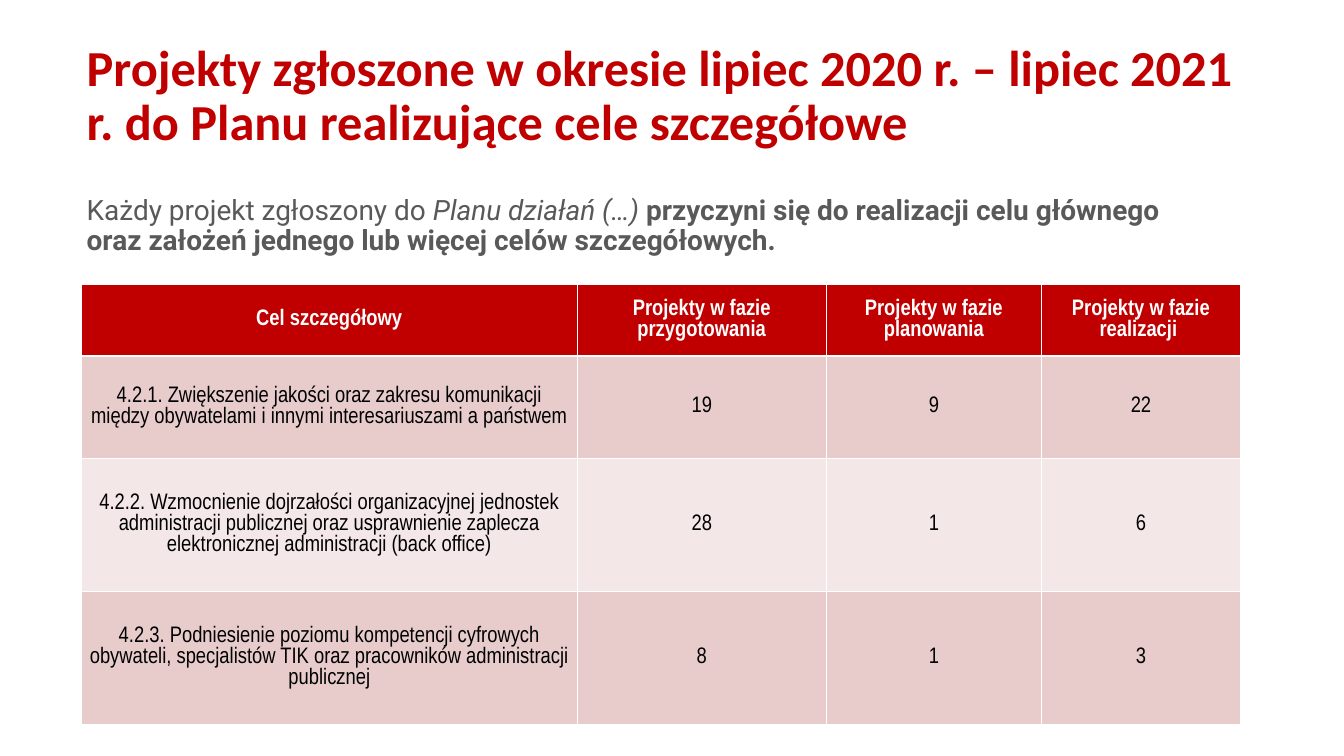
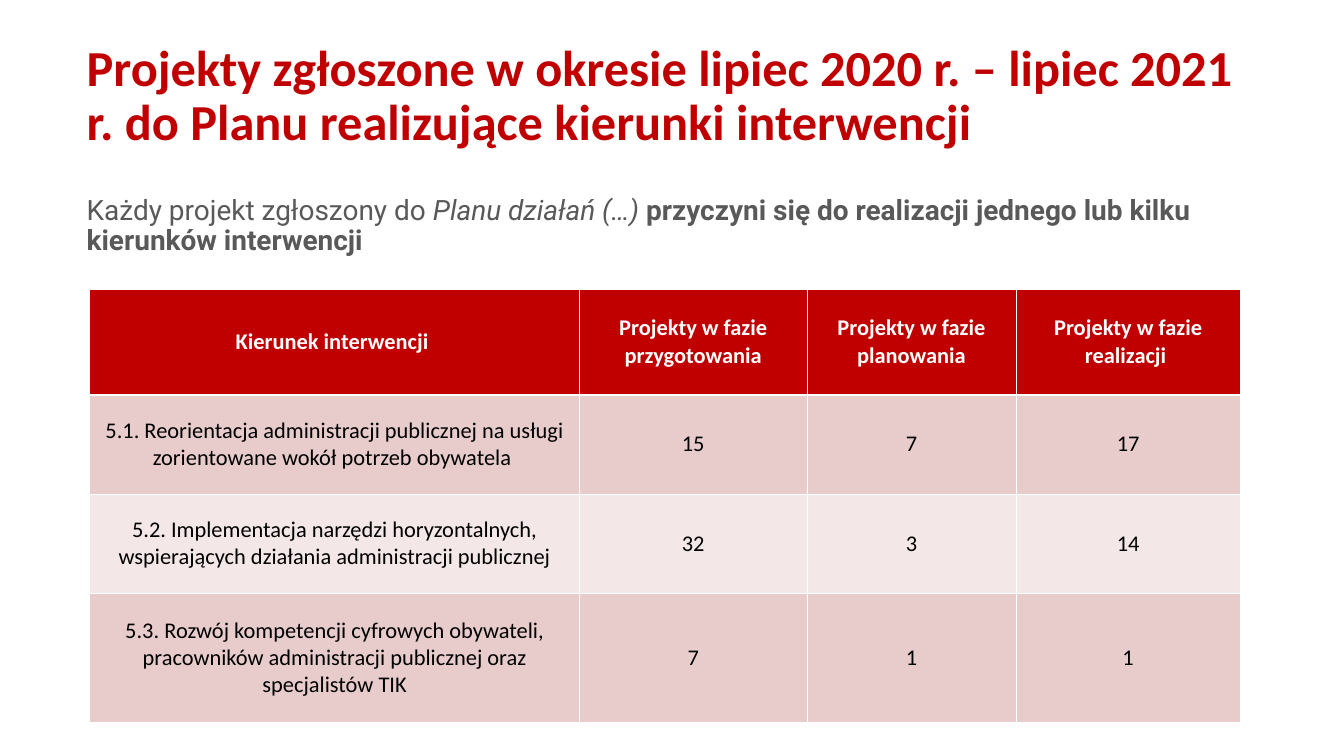
from lxml.etree import SubElement
from pptx import Presentation
from pptx.dml.color import RGBColor
from pptx.enum.text import MSO_ANCHOR as Anchor, MSO_AUTO_SIZE as AutoSize, PP_ALIGN as Align
from pptx.oxml.ns import qn
from pptx.util import Pt

COLORS = {
    "accent": "C00000",
    "lead": "595959",
    "cell": "000000",
    "white": "FFFFFF",
    "band_dark": "E8CCCC",
    "band_light": "F4E7E7",
}
LEFT = 116.6
TITLE_BOX = (LEFT, 57.6, 1656, 171.4)
TITLE_START = "Projekty zgłoszone w okresie lipiec 2020 r. – lipiec 2021 r. do Planu realizujące "
LEAD_START = "Każdy projekt zgłoszony do "
PLAN_NAME = "Planu działań (…) "
PHASES = [
    "Projekty w fazie przygotowania",
    "Projekty w fazie planowania",
    "Projekty w fazie realizacji ",
]

GOALS = {
    "topic": "cele szczegółowe",
    "lead": "przyczyni się do realizacji celu głównego oraz założeń "
            "jednego lub więcej celów szczegółowych.",
    "lead_size": (1615.7, 127.4),
    "corner": (LEFT, 406.1),
    "widths": [707.8, 356.4, 306.7, 285.1],
    "heights": [102.2, 146.2, 190.1, 190.1],
    "font": "Arial Narrow",
    "label_margin": 7.2,
    "rows": [
        ["Cel szczegółowy", *PHASES],
        ["4.2.1. Zwiększenie jakości oraz zakresu komunikacji między obywatelami "
         "i innymi interesariuszami a państwem", 19, 9, 22],
        ["4.2.2. Wzmocnienie dojrzałości organizacyjnej jednostek administracji publicznej "
         "oraz usprawnienie zaplecza elektronicznej administracji (back office)", 28, 1, 6],
        ["4.2.3. Podniesienie poziomu kompetencji cyfrowych obywateli, specjalistów TIK "
         "oraz pracowników administracji publicznej", 8, 1, 3],
    ],
}
INTERVENTIONS = {
    "topic": "kierunki interwencji",
    "lead": "przyczyni się do realizacji jednego lub kilku kierunków interwencji",
    "lead_size": (1602, 113.8),
    "corner": (128.2, 413.3),
    "widths": [699.8, 324.7, 298.8, 320.4],
    "heights": [150.5, 141.8, 141.8, 185],
    "font": "Calibri",
    "label_margin": 0,
    "rows": [
        ["Kierunek interwencji ", *PHASES],
        ["5.1. Reorientacja administracji publicznej na usługi zorientowane "
         "wokół potrzeb obywatela ", 15, 7, 17],
        ["5.2. Implementacja narzędzi horyzontalnych, wspierających działania "
         "administracji publicznej", 32, 3, 14],
        ["5.3. Rozwój kompetencji cyfrowych obywateli, pracowników administracji "
         "publicznej oraz specjalistów TIK", 7, 1, 1],
    ],
}


def rgb(name):
    return RGBColor.from_string(COLORS[name])


def style_run(run, font_name, size, color, bold=False, italic=False):
    font = run.font
    font.name, font.size = font_name, Pt(size)
    font.bold, font.italic = bold, italic
    font.color.rgb = rgb(color)


def place(placeholder, left, top, width, height):
    """Position a placeholder and return its first paragraph, set flush left."""
    placeholder.left, placeholder.top = Pt(left), Pt(top)
    placeholder.width, placeholder.height = Pt(width), Pt(height)
    frame = placeholder.text_frame
    frame.word_wrap = True
    frame.auto_size = AutoSize.NONE
    frame.vertical_anchor = Anchor.TOP
    paragraph = frame.paragraphs[0]
    paragraph.alignment = Align.LEFT
    paragraph.line_spacing = 0.9
    paragraph.space_before = Pt(0)
    return paragraph


def add_title(slide, topic):
    heading = place(slide.shapes.title, *TITLE_BOX)
    heading.text = TITLE_START + topic
    style_run(heading.runs[0], "Calibri", 72, "accent", bold=True)


def add_lead(slide, statement, size):
    lead = place(slide.placeholders[1], LEFT, 277.2, *size)
    properties = lead._p.get_or_add_pPr()
    properties.set("marL", "0")
    properties.set("indent", "0")
    SubElement(properties, qn("a:buNone"))
    for text, bold, italic in [
        (LEAD_START, False, False),
        (PLAN_NAME, False, True),
        (statement, True, False),
    ]:
        run = lead.add_run()
        run.text = text
        style_run(run, "Roboto", 40, "lead", bold, italic)


def add_borders(cell, bottom_width):
    properties = cell._tc.get_or_add_tcPr()
    for side, width in [("L", 1), ("R", 1), ("T", 1), ("B", bottom_width)]:
        line = SubElement(properties, qn(f"a:ln{side}"), w=str(Pt(width)))
        fill = SubElement(line, qn("a:solidFill"))
        SubElement(fill, qn("a:srgbClr"), val=COLORS["white"])


def fill_cell(cell, value, font_name, fill, is_header):
    add_borders(cell, 3 if is_header else 1)
    cell.fill.solid()
    cell.fill.fore_color.rgb = rgb(fill)
    cell.vertical_anchor = Anchor.MIDDLE
    paragraph = cell.text_frame.paragraphs[0]
    paragraph.text = str(value)
    paragraph.alignment = Align.CENTER
    style_run(paragraph.runs[0], font_name, 32, "white" if is_header else "cell", is_header)


def add_phase_table(slide, content):
    rows, widths, heights = content["rows"], content["widths"], content["heights"]
    left, top = content["corner"]
    table = slide.shapes.add_table(
        len(rows), len(widths), Pt(left), Pt(top), Pt(sum(widths)), Pt(sum(heights))
    ).table
    for column, width in zip(table.columns, widths):
        column.width = Pt(width)
    for index, (row, height, values) in enumerate(zip(table.rows, heights, rows)):
        row.height = Pt(height)
        band = "band_dark" if index % 2 else "band_light"
        is_header = index == 0
        for cell, value in zip(row.cells, values):
            fill_cell(cell, value, content["font"], "accent" if is_header else band, is_header)
        if not is_header:
            label = row.cells[0]
            label.margin_left = label.margin_right = Pt(content["label_margin"])
            label.margin_top = label.margin_bottom = Pt(content["label_margin"] / 2)


def main():
    deck = Presentation()
    deck.slide_width, deck.slide_height = Pt(1920), Pt(1080)
    for content in (GOALS, INTERVENTIONS):
        slide = deck.slides.add_slide(deck.slide_layouts[1])
        add_title(slide, content["topic"])
        add_lead(slide, content["lead"], content["lead_size"])
        add_phase_table(slide, content)
    deck.save("out.pptx")


if __name__ == "__main__":
    main()
